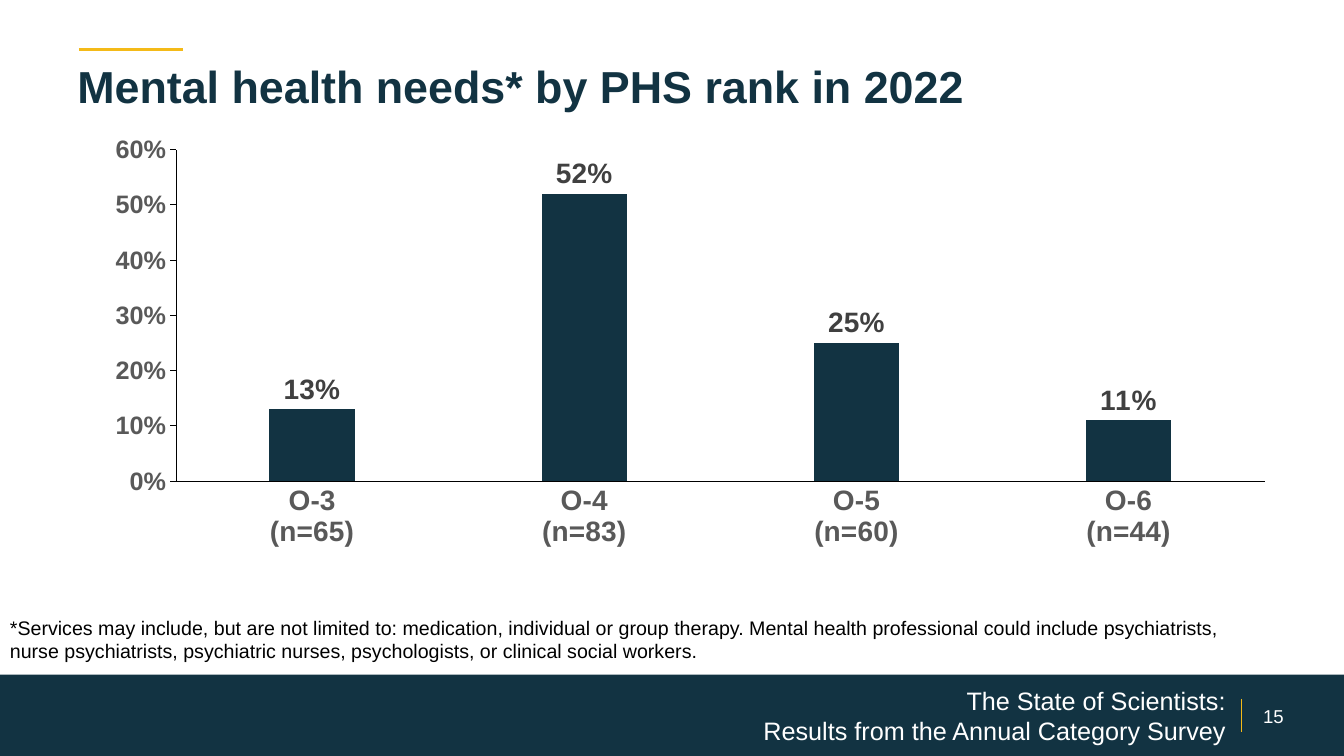
"""Builds the slide on mental health needs by PHS rank."""
from dataclasses import dataclass

from lxml.etree import SubElement
from pptx import Presentation
from pptx.chart.data import CategoryChartData
from pptx.dml.color import RGBColor
from pptx.enum.chart import XL_CHART_TYPE as ChartType, XL_LABEL_POSITION as LabelPosition
from pptx.enum.chart import XL_TICK_MARK as TickMark
from pptx.enum.shapes import MSO_CONNECTOR as Connector, MSO_SHAPE as Preset
from pptx.enum.text import MSO_ANCHOR as Anchor, PP_ALIGN as Align
from pptx.oxml.ns import qn
from pptx.util import Inches, Pt

COLUMNS, ROWS = 160, 90
WIDTH, HEIGHT = Inches(13.33), Inches(7.5)


@dataclass(frozen=True)
class Theme:
    """Colours and type sizes of the slide."""
    font: str = "Arial"
    navy: str = "123342"
    gold: str = "F4BA18"
    white: str = "FFFFFF"
    black: str = "000000"
    axis_gray: str = "595959"
    label_gray: str = "404040"
    title: float = 32
    category: float = 20
    value: float = 18
    footer: float = 18
    note: float = 14
    number: float = 13.3


THEME = Theme()


@dataclass(frozen=True)
class Area:
    """A rectangle in grid columns and rows."""
    column: float
    row: float
    columns: float
    rows: float

    def emu(self) -> tuple[int, int, int, int]:
        """Return left, top, width and height in slide units."""
        return (round(self.column * WIDTH / COLUMNS), round(self.row * HEIGHT / ROWS),
                round(self.columns * WIDTH / COLUMNS), round(self.rows * HEIGHT / ROWS))


@dataclass(frozen=True)
class Label:
    """A block of text and its look."""
    text: str
    area: Area
    size: float
    color: str
    align: Align = Align.LEFT
    anchor: Anchor = Anchor.TOP
    bold: bool = False


@dataclass(frozen=True)
class Rule:
    """A straight line along one side of the grid."""
    area: Area
    weight: float


@dataclass(frozen=True)
class Rank:
    """One bar of the chart."""
    name: str
    respondents: int
    share: float


TITLE = Label("Mental health needs* by PHS rank in 2022", Area(8, 6.4, 144, 11.6),
              THEME.title, THEME.navy, bold=True)
LABELS = [
    Label("*Services may include, but are not limited to: medication, individual or group "
          "therapy. Mental health professional could include psychiatrists, nurse "
          "psychiatrists, psychiatric nurses, psychologists, or clinical social workers.",
          Area(0, 72.7, 149, 6.8), THEME.note, THEME.black),
    Label("The State of Scientists:\nResults from the Annual Category Survey",
          Area(45, 83.2, 102.1, 4), THEME.footer, THEME.white, Align.RIGHT, Anchor.MIDDLE),
    Label("15", Area(146.9, 83.6, 9.4, 3.4), THEME.number, THEME.white,
          Align.CENTER, Anchor.MIDDLE),
]
RULES = [Rule(Area(9.4, 5.9, 12.4, 0), 2.5), Rule(Area(147.8, 83.2, 0, 4), 0.75)]
FOOTER_BAND = Area(0, 80.3, 160, 9.7)
CHART_AREA = Area(8, 15.1, 144, 54.1)
PLOT_SHARES = {"x": 0.09, "y": 0.05, "w": 0.9, "h": 0.73}
RANKS = [Rank("O-3", 65, 0.13), Rank("O-4", 83, 0.52),
         Rank("O-5", 60, 0.25), Rank("O-6", 44, 0.11)]


def style_font(font, size: float, color: str, bold: bool) -> None:
    """Apply the theme typeface with a size, colour and weight."""
    font.name, font.size, font.bold = THEME.font, Pt(size), bold
    font.color.rgb = RGBColor.from_string(color)


def place_text(shape, label: Label) -> None:
    """Position a shape and write a label into it."""
    shape.left, shape.top, shape.width, shape.height = label.area.emu()
    frame = shape.text_frame
    frame.word_wrap, frame.vertical_anchor = True, label.anchor
    paragraph = frame.paragraphs[0]
    paragraph.text, paragraph.alignment = label.text, label.align
    style_font(paragraph.font, label.size, label.color, label.bold)


def draw_rule(slide, rule: Rule) -> None:
    """Draw a gold line without a shadow."""
    left, top, width, height = rule.area.emu()
    line = slide.shapes.add_connector(Connector.STRAIGHT, left, top, left + width, top + height)
    line.line.color.rgb = RGBColor.from_string(THEME.gold)
    line.line.width = Pt(rule.weight)
    SubElement(line._element.spPr, qn("a:effectLst"))


def draw_band(slide, area: Area) -> None:
    """Draw the dark footer band."""
    band = slide.shapes.add_shape(Preset.RECTANGLE, *area.emu())
    band.shadow.inherit = False
    band.fill.solid()
    band.fill.fore_color.rgb = RGBColor.from_string(THEME.navy)
    band.line.fill.background()


def style_axis(axis, size: float, tick: TickMark) -> None:
    """Give an axis its font, line and tick marks."""
    style_font(axis.tick_labels.font, size, THEME.axis_gray, True)
    axis.has_major_gridlines = False
    axis.major_tick_mark, axis.minor_tick_mark = tick, TickMark.NONE
    axis.format.line.color.rgb = RGBColor.from_string(THEME.black)
    axis.format.line.width = Pt(0.75)


def fix_plot_area(chart) -> None:
    """Set the inner plot area as shares of the chart."""
    plot_area = chart._chartSpace.chart.plotArea
    layout = plot_area.find(qn("c:layout"))
    if layout is None:
        layout = SubElement(plot_area, qn("c:layout"))
        plot_area.insert(0, layout)
    manual = SubElement(layout, qn("c:manualLayout"))
    settings = {"layoutTarget": "inner", "xMode": "edge", "yMode": "edge", **PLOT_SHARES}
    for name, value in settings.items():
        SubElement(manual, qn(f"c:{name}")).set("val", str(value))


def draw_chart(slide) -> None:
    """Draw the column chart of shares by rank."""
    data = CategoryChartData(number_format="0%")
    data.categories = [f"{rank.name}\n(n={rank.respondents})" for rank in RANKS]
    data.add_series("Series 1", [rank.share for rank in RANKS])
    chart = slide.shapes.add_chart(ChartType.COLUMN_CLUSTERED, *CHART_AREA.emu(), data).chart
    chart.has_legend = chart.has_title = False
    style_font(chart.font, 10, THEME.black, False)
    style_axis(chart.category_axis, THEME.category, TickMark.NONE)
    style_axis(chart.value_axis, THEME.value, TickMark.OUTSIDE)
    axis = chart.value_axis
    axis.minimum_scale, axis.maximum_scale, axis.major_unit = 0, 0.6, 0.1
    axis.tick_labels.number_format, axis.tick_labels.number_format_is_linked = "0%", False

    plot = chart.plots[0]
    plot.gap_width, plot.overlap, plot.vary_by_categories = 219, -27, False
    fill = plot.series[0].format.fill
    fill.solid()
    fill.fore_color.rgb = RGBColor.from_string(THEME.navy)
    labels = plot.series[0].data_labels
    labels.show_value, labels.position = True, LabelPosition.OUTSIDE_END
    labels.number_format, labels.number_format_is_linked = "0%", False
    style_font(labels.font, THEME.category, THEME.label_gray, True)
    fix_plot_area(chart)


def main() -> None:
    """Build and save the presentation."""
    presentation = Presentation()
    presentation.slide_width, presentation.slide_height = WIDTH, HEIGHT
    slide = presentation.slides.add_slide(presentation.slide_layouts[5])
    draw_band(slide, FOOTER_BAND)
    for rule in RULES:
        draw_rule(slide, rule)
    draw_chart(slide)
    place_text(slide.shapes.title, TITLE)
    for label in LABELS:
        place_text(slide.shapes.add_textbox(*label.area.emu()), label)
    presentation.save("out.pptx")


if __name__ == "__main__":
    main()
